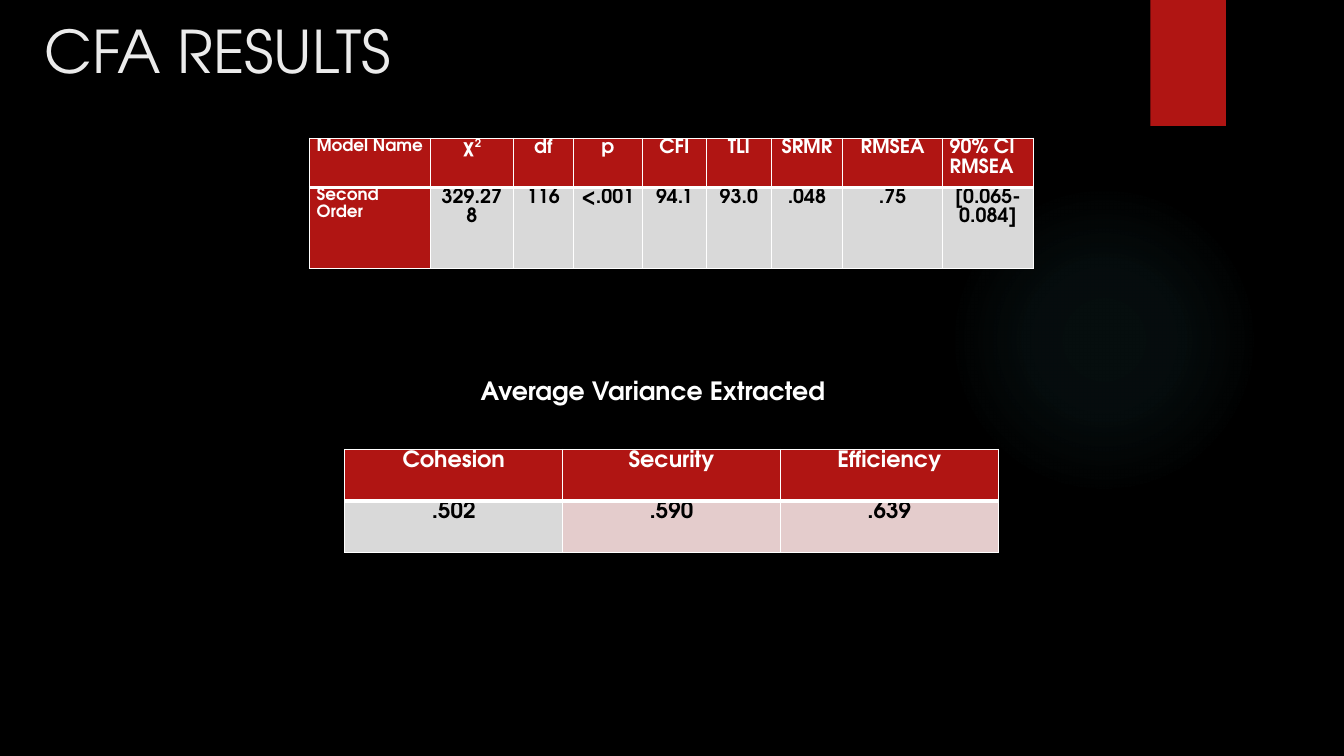
from dataclasses import dataclass

from lxml import etree
from pptx import Presentation
from pptx.dml.color import RGBColor
from pptx.enum.shapes import MSO_SHAPE as Shape
from pptx.enum.text import MSO_ANCHOR as Anchor, PP_ALIGN as Align
from pptx.oxml import parse_xml
from pptx.oxml.ns import nsdecls, qn
from pptx.util import Inches, Pt


@dataclass(frozen=True)
class Theme:
    font: str = "TeX Gyre Adventor"
    back: str = "000000"
    red: str = "B01513"
    glow: str = "50B9C1"
    pale: str = "EBEBEB"
    white: str = "FFFFFF"
    dark: str = "000000"
    gray: str = "D9D9D9"
    pink: str = "E4CCCC"
    title: int = 42
    head: int = 18
    large: int = 16
    mid: int = 14
    small: int = 12


T = Theme()


def write(frame, text, size, color, bold=True, align=Align.LEFT, space=None, sup=""):
    """Fill a text frame; sup is raised after the text."""
    frame.word_wrap = True
    par = frame.paragraphs[0]
    par.alignment = align
    par.line_spacing = space
    for part in filter(None, (text, sup)):
        run = par.add_run()
        run.text = part
        font = run.font
        font.name, font.size, font.bold = T.font, Pt(size), bold
        font.color.rgb = RGBColor.from_string(color)
    if sup:
        run._r.get_or_add_rPr().set("baseline", "30000")


def grid(left, top, widths, heights, rows, size, fills, label=False):
    """Add a table; label marks a red first column, fills color the body."""
    frame = slide.shapes.add_table(
        len(rows), len(widths), Inches(left), Inches(top),
        Inches(sum(widths)), Inches(sum(heights)))
    table = frame.table
    table.horz_banding = False
    for col, width in zip(table.columns, widths):
        col.width = Inches(width)
    for row, height in zip(table.rows, heights):
        row.height = Inches(height)
    for r, row in enumerate(rows):
        for c, text in enumerate(row):
            cell = table.cell(r, c)
            cell.margin_left = cell.margin_right = Inches(0.07)
            cell.margin_top = cell.margin_bottom = 0
            props = cell._tc.get_or_add_tcPr()
            thick = "lnT" if r else "lnB"
            for side in ("lnL", "lnR", "lnT", "lnB"):
                line = etree.SubElement(
                    props, qn("a:" + side), w=str(Pt(3 if side == thick else 1)))
                fill = etree.SubElement(line, qn("a:solidFill"))
                etree.SubElement(fill, qn("a:srgbClr"), val=T.white)
            first = label and c == 0
            red = r == 0 or first
            cell.fill.solid()
            cell.fill.fore_color.rgb = RGBColor.from_string(T.red if red else fills[c])
            flush = first or text.startswith("90%")
            base, mark, sup = text.partition("^")
            write(cell.text_frame, base, T.small if first else size,
                  T.white if red else T.dark, space=1.07, sup=sup,
                  align=Align.LEFT if flush else Align.CENTER)


deck = Presentation()
deck.slide_width, deck.slide_height = Inches(13.33), Inches(7.5)
slide = deck.slides.add_slide(deck.slide_layouts[5])
slide.background.fill.solid()
slide.background.fill.fore_color.rgb = RGBColor.from_string(T.back)

glow = slide.shapes.add_shape(
    Shape.OVAL, Inches(9.41), Inches(1.83), Inches(3.08), Inches(3.08))
flag = slide.shapes.add_shape(
    Shape.RECTANGLE, Inches(11.41), 0, Inches(0.75), Inches(1.25))
for shape in (glow, flag):
    shape.shadow.inherit = False
    shape.line.fill.background()
flag.fill.solid()
flag.fill.fore_color.rgb = RGBColor.from_string(T.red)

stops = "".join(
    f'<a:gs pos="{pos}000"><a:srgbClr val="{T.glow}">'
    f'<a:alpha val="{alpha}000"/></a:srgbClr></a:gs>'
    for pos, alpha in ((0, 7), (36, 6), (69, 0)))
fade = parse_xml(
    f'<a:gradFill {nsdecls("a")}><a:gsLst>{stops}</a:gsLst><a:path path="circle">'
    '<a:fillToRect l="50000" t="50000" r="50000" b="50000"/></a:path></a:gradFill>')
glow._element.spPr.find(qn("a:prstGeom")).addnext(fade)

title = slide.shapes.title
title.left, title.top = Inches(0.34), Inches(0.14)
title.width, title.height = Inches(9.33), Inches(0.72)
title.text_frame.vertical_anchor = Anchor.MIDDLE
write(title.text_frame, "CFA RESULTS", T.title, T.pale, bold=False)

grid(3.07, 1.37, (1.2, 0.82, 0.6, 0.68, 0.64, 0.64, 0.71, 0.99, 0.9), (0.49, 0.8), (
    ("Model Name", "χ^2", "df", "p", "CFI", "TLI", "SRMR", "RMSEA", "90% CI RMSEA"),
    ("Second Order", "329.278", "116", "<.001", "94.1", "93.0", ".048", ".75",
     "[0.065-0.084]"),
), T.mid, [T.gray] * 9, label=True)

head = slide.shapes.add_textbox(Inches(4.67), Inches(3.67), Inches(4.1), Inches(0.4))
write(head.text_frame, "Average Variance Extracted", T.head, T.white)

grid(3.42, 4.46, [2.16] * 3, [0.51] * 2, (
    ("Cohesion", "Security", "Efficiency"),
    (".502", ".590", ".639"),
), T.large, (T.gray, T.pink, T.pink))

deck.save("out.pptx")
